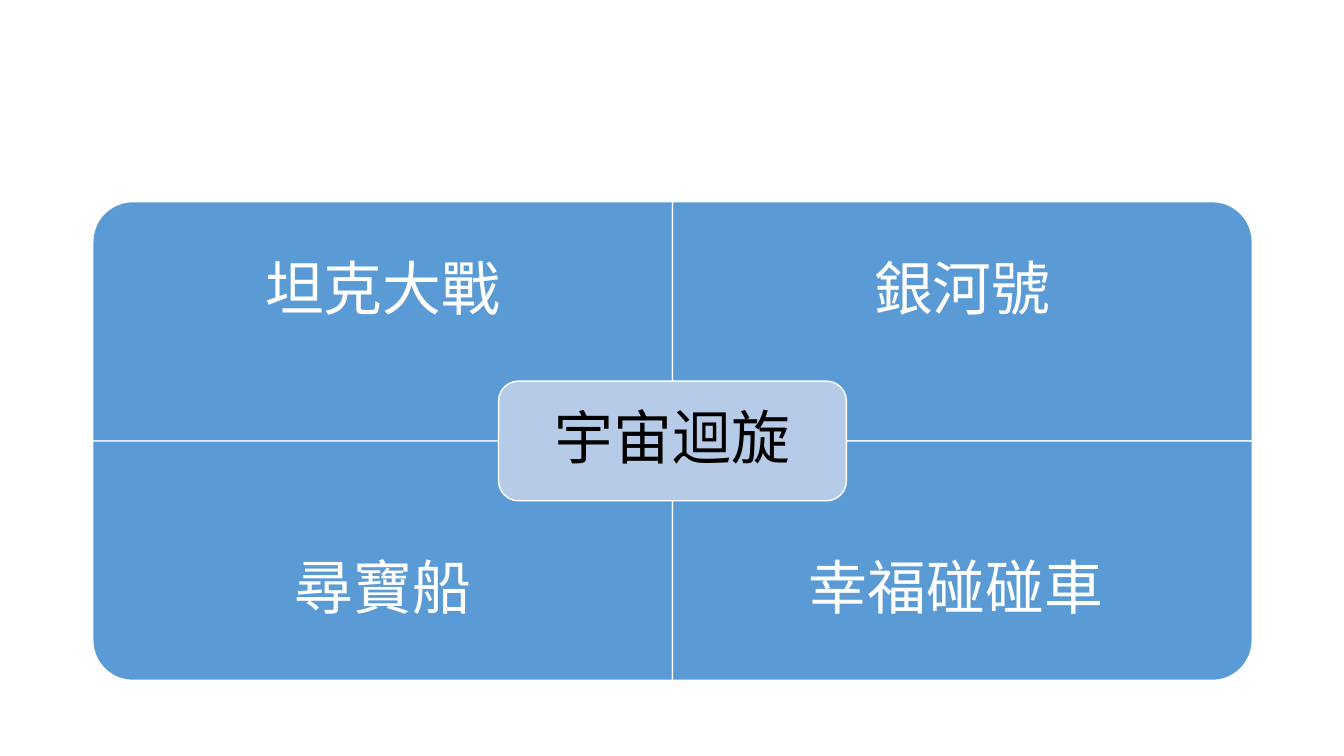
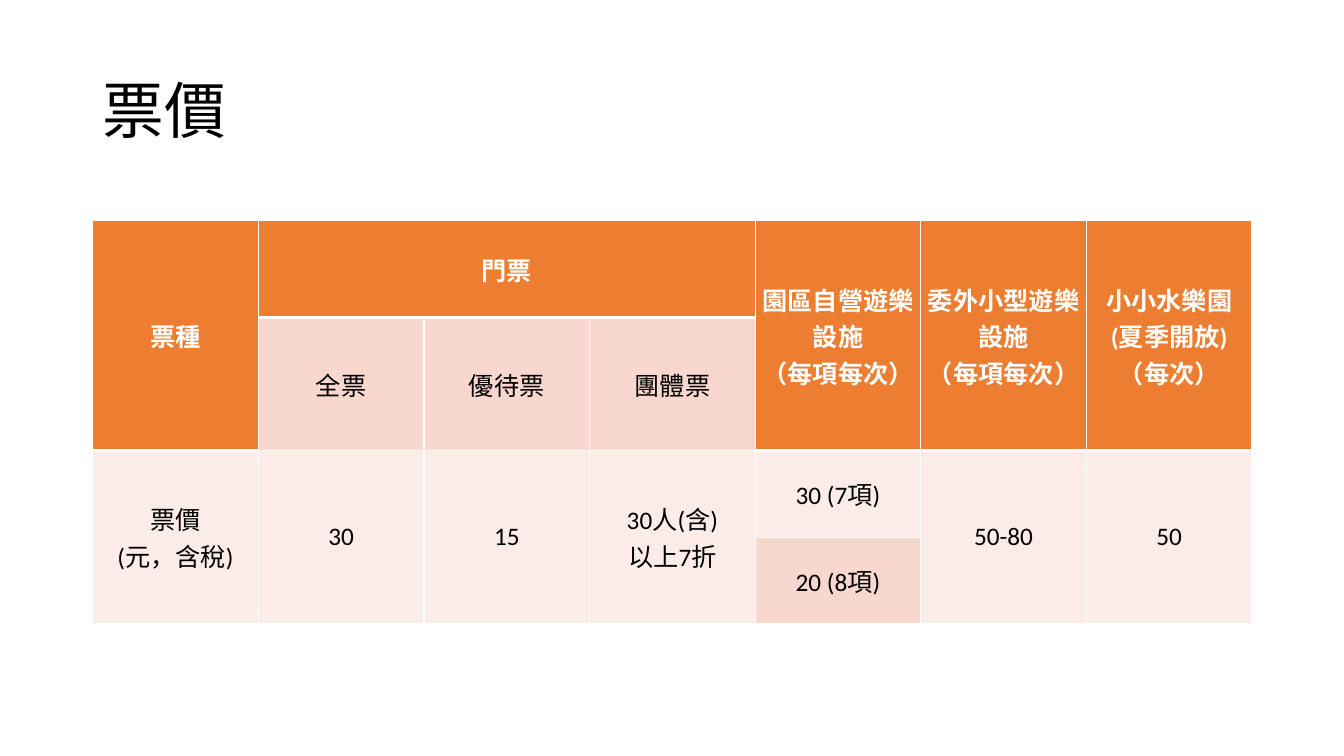
from lxml import etree
from pptx import Presentation
from pptx.dml.color import RGBColor
from pptx.enum.shapes import MSO_SHAPE as SHAPE
from pptx.enum.text import MSO_ANCHOR as ANCHOR, PP_ALIGN as ALIGN
from pptx.oxml.ns import qn
from pptx.util import Inches, Pt

WHITE, BLACK = "FFFFFF", "000000"
BLUE, PALE_BLUE = "5B9BD5", "B5CBE7"
ORANGE, PEACH, PALE_PEACH = "ED7D31", "F8D7CE", "FCECE8"
FONT = "Calibri"
LEFT, WIDTH = 0.92, 11.5

HEADER = {"size": Pt(18), "bold": True}
BODY = {"size": Pt(18), "bold": False}
LABEL = {"size": Pt(42)}
TITLE = {"size": Pt(44)}

RIDES = ["坦克大戰", "銀河號", "尋寶船", "幸福碰碰車 "]
CORNER_TURNS = [270, 0, 180, 90]

HEADER_CELLS = [
    (0, 0, 2, 1, "票種"),
    (0, 1, 1, 3, "門票"),
    (0, 4, 2, 1, "園區自營遊樂設施\n（每項每次）"),
    (0, 5, 2, 1, "委外小型遊樂設施\n（每項每次）"),
    (0, 6, 2, 1, "小小水樂園\n(夏季開放)\n（每次）"),
]
TICKET_CELLS = [
    (1, 1, 1, 1, "全票"),
    (1, 2, 1, 1, "優待票"),
    (1, 3, 1, 1, "團體票"),
    (3, 4, 1, 1, "20 (8項)"),
]
PRICE_CELLS = [
    (2, 0, 2, 1, "票價\n(元，含稅)"),
    (2, 1, 2, 1, "30"),
    (2, 2, 2, 1, "15"),
    (2, 3, 2, 1, "30人(含)\n以上7折"),
    (2, 4, 1, 1, "30 (7項)"),
    (2, 5, 2, 1, "50-80"),
    (2, 6, 2, 1, "50"),
]
ROW_HEIGHTS = [0.96, 1.32, 0.86, 0.86]
COLUMNS = 7


def rgb(value):
    return RGBColor.from_string(value)


def write(tf, text, style, color, align=ALIGN.CENTER, spacing=None):
    tf.word_wrap = True
    p = tf.paragraphs[0]
    p.text = text
    p.alignment = align
    p.line_spacing = spacing
    for r in p.runs:
        r.font.name = FONT
        r.font.color.rgb = rgb(color)
        for name, value in style.items():
            setattr(r.font, name, value)


def set_margins(target, x, y):
    for side, value in {"left": x, "right": x, "top": y, "bottom": y}.items():
        setattr(target, f"margin_{side}", Inches(value))


def add_text(slide, box, text, style, color, align=ALIGN.CENTER, margins=(0.1, 0.05)):
    tf = slide.shapes.add_textbox(*map(Inches, box)).text_frame
    tf.vertical_anchor = ANCHOR.MIDDLE
    set_margins(tf, *margins)
    write(tf, text, style, color, align, 0.9)


def add_panel(slide, kind, box, fill, turn=0):
    x, y, w, h = box
    if turn % 180:
        x, y, w, h = x + (w - h) / 2, y + (h - w) / 2, h, w
    sp = slide.shapes.add_shape(kind, *map(Inches, (x, y, w, h)))
    sp.rotation = turn
    sp.shadow.inherit = False
    sp.fill.solid()
    sp.fill.fore_color.rgb = rgb(fill)
    sp.line.color.rgb = rgb(WHITE)
    sp.line.width = Pt(1)
    return sp


def add_matrix(slide, box):
    x, y, w, h = box
    half_w, half_h = w / 2, h / 2
    label_h = h * 3 / 8
    for i, (ride, turn) in enumerate(zip(RIDES, CORNER_TURNS)):
        row, col = divmod(i, 2)
        px, py = x + col * half_w, y + row * half_h
        add_panel(slide, SHAPE.ROUND_1_RECTANGLE, (px, py, half_w, half_h), BLUE, turn)
        label_y = py + row * (half_h - label_h)
        add_text(slide, (px, label_y, half_w, label_h), ride, LABEL, WHITE,
                 margins=(0.33, 0.33))
    cw, ch = w * 0.3, h / 4
    center = (x + (w - cw) / 2, y + (h - ch) / 2, cw, ch)
    sp = add_panel(slide, SHAPE.ROUNDED_RECTANGLE, center, PALE_BLUE)
    sp.text_frame.vertical_anchor = ANCHOR.MIDDLE
    set_margins(sp.text_frame, 0.17, 0.17)
    write(sp.text_frame, "宇宙迴旋", LABEL, BLACK, spacing=0.9)


def add_borders(cell, widths):
    tc_pr = cell._tc.get_or_add_tcPr()
    for side, width in widths.items():
        ln = etree.SubElement(tc_pr, qn(f"a:ln{side}"), w=str(Pt(width)))
        fill = etree.SubElement(ln, qn("a:solidFill"))
        etree.SubElement(fill, qn("a:srgbClr"), val=WHITE)


def fill_cells(table, entries, fill, style, color, borders):
    for row, col, rows, cols, text in entries:
        cell = table.cell(row, col)
        if rows * cols > 1:
            cell.merge(table.cell(row + rows - 1, col + cols - 1))
        add_borders(cell, borders)
        cell.fill.solid()
        cell.fill.fore_color.rgb = rgb(fill)
        cell.vertical_anchor = ANCHOR.MIDDLE
        set_margins(cell, 0.03, 0.03)
        write(cell.text_frame, text, style, color)


def add_price_table(slide, x, y, w):
    box = map(Inches, (x, y, w, sum(ROW_HEIGHTS)))
    table = slide.shapes.add_table(len(ROW_HEIGHTS), COLUMNS, *box).table
    for column in table.columns:
        column.width = Inches(w / COLUMNS)
    for row, height in zip(table.rows, ROW_HEIGHTS):
        row.height = Inches(height)
    header_borders = {"L": 1, "R": 1, "T": 1, "B": 3}
    fill_cells(table, HEADER_CELLS, ORANGE, HEADER, WHITE, header_borders)
    fill_cells(table, TICKET_CELLS, PEACH, BODY, BLACK, {})
    fill_cells(table, PRICE_CELLS, PALE_PEACH, BODY, BLACK, {})


def main():
    prs = Presentation()
    prs.slide_width, prs.slide_height = Inches(13.33), Inches(7.5)
    blank = prs.slide_layouts[6]
    add_matrix(prs.slides.add_slide(blank), (LEFT, 2, WIDTH, 4.75))
    prices = prs.slides.add_slide(blank)
    add_text(prices, (LEFT, 0.4, WIDTH, 1.45), "票價", TITLE, BLACK, ALIGN.LEFT)
    add_price_table(prices, LEFT, 2.19, WIDTH)
    prs.save("out.pptx")


if __name__ == "__main__":
    main()
